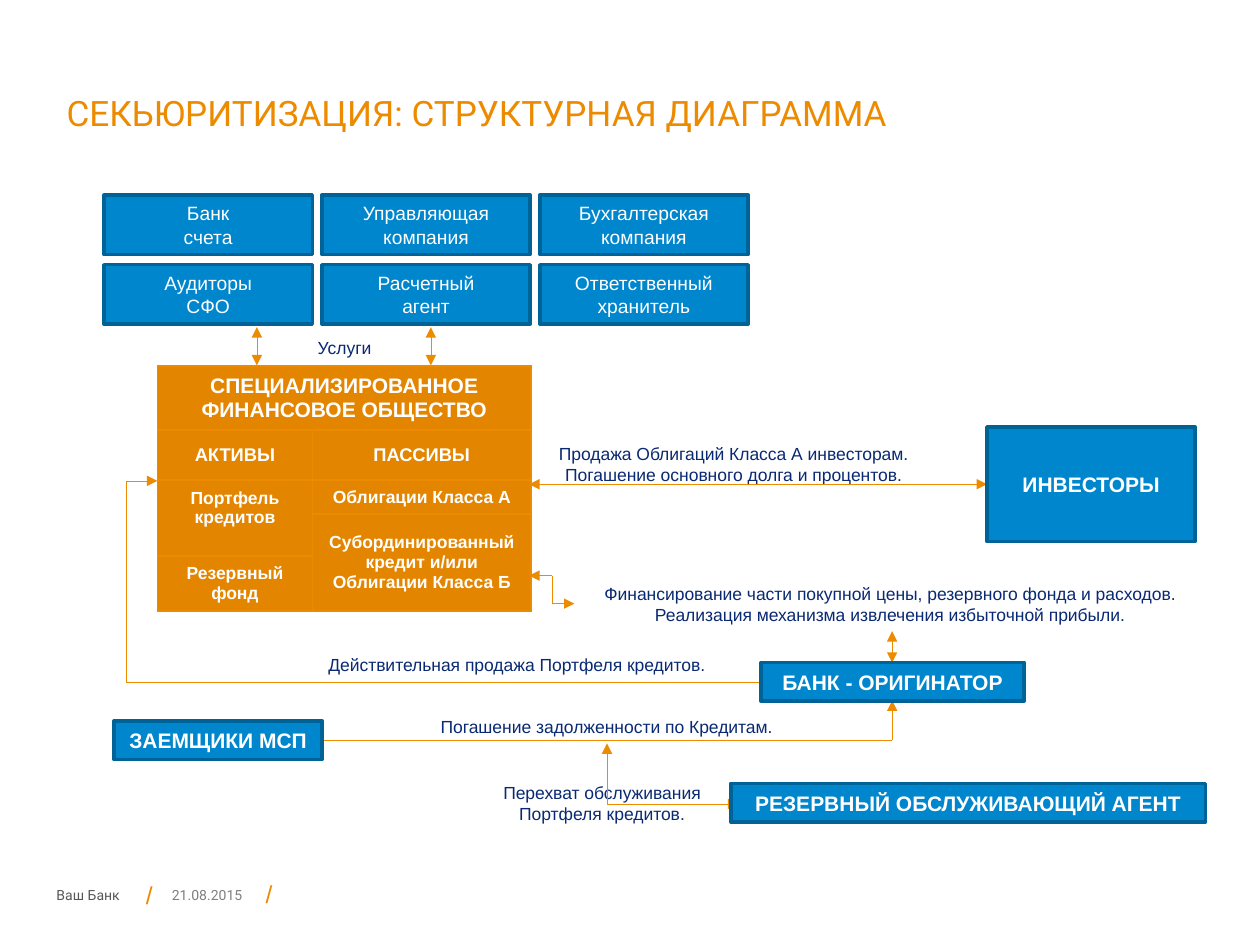
"""Build the securitisation structure diagram slide."""
from lxml.etree import SubElement
from pptx import Presentation
from pptx.dml.color import RGBColor
from pptx.enum.dml import MSO_LINE
from pptx.enum.shapes import MSO_CONNECTOR as Connector, MSO_SHAPE as Shape
from pptx.enum.text import MSO_ANCHOR as Anchor, PP_ALIGN as Align
from pptx.oxml.ns import qn
from pptx.util import Pt

ORANGE, BLUE, DARK_BLUE, NAVY, WHITE = "ED8B00", "0086CD", "006398", "0A2973", "FFFFFF"
TABLE_FILL = "E48500"

TITLE = ("СЕКЬЮРИТИЗАЦИЯ: СТРУКТУРНАЯ ДИАГРАММА", 31, 49, 658, 57)
FOOTERS = [
    ("Ваш Банк", 25.2, 502.6, 96.5, 17.3, 8, "Roboto", "575757", Align.LEFT),
    ("/", 76.3, 499, 16, 24.5, 14, "Arial", ORANGE, Align.LEFT),
    ("/", 144.7, 498.2, 16, 24.5, 14, "Arial", ORANGE, Align.LEFT),
    ("21.08.2015", 84.2, 502.6, 68.4, 17.3, 8, "Roboto", "7F7F7F", Align.CENTER),
]
SERVICES = [
    ["Банк\nсчета", "Управляющая\nкомпания", "Бухгалтерская\nкомпания"],
    ["Аудиторы\nСФО", "Расчетный\nагент", "Ответственный\nхранитель"],
]
SERVICE_LEFT, SERVICE_TOP, SERVICE_WIDTH, SERVICE_HEIGHT = 59.5, 111.5, 119, 34
SERVICE_STEP_X, SERVICE_STEP_Y = 124.5, 39.75
PARTIES = [
    ("ИНВЕСТОРЫ", 564, 244, 119, 65.5),
    ("ЗАЕМЩИКИ МСП", 65.2, 412, 119, 22),
    ("РЕЗЕРВНЫЙ ОБСЛУЖИВАЮЩИЙ АГЕНТ", 417.6, 447.8, 271.4, 22),
    ("БАНК - ОРИГИНАТОР", 434.8, 378.6, 150.5, 22),
]
LABELS = [
    ("Услуги", 126, 188.8, 141.8, 19.4),
    ("Погашение задолженности по Кредитам.", 196.8, 405.5, 299.5, 19.4),
    ("Действительная продажа Портфеля кредитов.", 155.5, 370.3, 279.4, 19.4),
    ("Финансирование части покупной цены, резервного фонда и расходов.\n"
     "Реализация механизма извлечения избыточной прибыли.", 326, 329.2, 365, 31.7),
    ("Перехват обслуживания\nПортфеля кредитов.", 193, 443, 302, 31.7),
    ("Продажа Облигаций Класса А инвесторам.\nПогашение основного долга и процентов.",
     309, 249.5, 220.3, 31.7),
]
ARROWS = [
    ("straightConnector1", (146.8, 187), (146.8, 208.8), True, None),
    ("straightConnector1", (246.2, 187), (246.2, 208.8), True, None),
    ("straightConnector1", (302.4, 276.7), (564, 276.7), True, None),
    ("straightConnector1", (509.8, 378.7), (509.8, 360.7), True, None),
    ("bentConnector3", (328.3, 345), (302.4, 329), True, 50000),
    ("bentConnector3", (434.8, 389.8), (90, 274.8), False, 105200),
    ("bentConnector2", (184.3, 422.8), (509.8, 400.3), False, None),
    ("bentConnector2", (421.9, 459.4), (346.9, 424.8), True, None),
]
TABLE_LEFT, TABLE_TOP = 90, 209.2
COLUMNS = [88.5, 125]
ROWS = [36.6, 28.6, 19.4, 24, 31.4]
MERGES = [((0, 0), (0, 1)), ((2, 0), (3, 0)), ((3, 1), (4, 1))]
CELLS = [
    (0, 0, "СПЕЦИАЛИЗИРОВАННОЕ\nФИНАНСОВОЕ ОБЩЕСТВО", 12, 3.6),
    (1, 0, "АКТИВЫ", 10.5, 3.6),
    (1, 1, "ПАССИВЫ", 10.5, 3.6),
    (2, 0, "Портфель кредитов", 10, 15),
    (2, 1, "Облигации Класса А", 10, 3.6),
    (3, 1, "Субординированный кредит и/или Облигации Класса Б", 10, 3.6),
    (4, 0, "Резервный фонд", 10, 3.6),
]


def rgb(color):
    """Turn a hex string into a colour."""
    return RGBColor.from_string(color)


def write(frame, text, size, color, bold=False, font="Arial", align=Align.CENTER):
    """Write lines of text into one paragraph."""
    paragraph = frame.paragraphs[0]
    paragraph.alignment = align
    for number, line in enumerate(text.split("\n")):
        if number:
            paragraph.add_line_break()
        run = paragraph.add_run()
        run.text = line
        run.font.name, run.font.size, run.font.bold = font, Pt(size), bold
        run.font.color.rgb = rgb(color)


def add_label(slide, text, left, top, width, height, size=10, font="Arial",
              color=NAVY, align=Align.CENTER, anchor=Anchor.MIDDLE):
    """Add a text box."""
    box = slide.shapes.add_textbox(Pt(left), Pt(top), Pt(width), Pt(height))
    box.text_frame.word_wrap = True
    box.text_frame.vertical_anchor = anchor
    write(box.text_frame, text, size, color, font=font, align=align)


def add_box(slide, text, left, top, width, height, size=12, bold=True):
    """Add a blue rectangle with text."""
    shape = slide.shapes.add_shape(Shape.RECTANGLE, Pt(left), Pt(top), Pt(width), Pt(height))
    shape.shadow.inherit = False
    shape.fill.solid()
    shape.fill.fore_color.rgb = rgb(BLUE)
    shape.line.color.rgb = rgb(DARK_BLUE)
    shape.line.width = Pt(2)
    shape.text_frame.word_wrap = True
    shape.text_frame.vertical_anchor = Anchor.MIDDLE
    write(shape.text_frame, text, size, WHITE, bold)


def add_arrow(slide, preset, start, end, both_ends, bend):
    """Add a dotted connector with arrowheads."""
    points = [Pt(value) for value in start + end]
    connector = slide.shapes.add_connector(Connector.STRAIGHT, *points)
    connector.line.color.rgb = rgb(ORANGE)
    connector.line.width = Pt(0.25)
    connector.line.dash_style = MSO_LINE.ROUND_DOT
    properties = connector._element.spPr
    geometry = properties.find(qn("a:prstGeom"))
    geometry.set("prst", preset)
    if bend is not None:
        guides = geometry.find(qn("a:avLst"))
        SubElement(guides, qn("a:gd"), name="adj1", fmla=f"val {bend}")
    line = properties.find(qn("a:ln"))
    for tag in ["a:headEnd", "a:tailEnd"] if both_ends else ["a:tailEnd"]:
        SubElement(line, qn(tag), type="triangle")
    SubElement(properties, qn("a:effectLst"))


def style_cell(cell):
    """Give a cell its borders and fill."""
    properties = cell._tc.get_or_add_tcPr()
    for side in ("a:lnL", "a:lnR", "a:lnT", "a:lnB"):
        line = SubElement(properties, qn(side), w=str(Pt(1)))
        SubElement(SubElement(line, qn("a:solidFill")), qn("a:srgbClr"), val=ORANGE)
    cell.fill.solid()
    cell.fill.fore_color.rgb = rgb(TABLE_FILL)


def add_balance_table(slide):
    """Add the table of assets and liabilities."""
    table = slide.shapes.add_table(len(ROWS), len(COLUMNS), Pt(TABLE_LEFT), Pt(TABLE_TOP),
                                   Pt(sum(COLUMNS)), Pt(sum(ROWS))).table
    for column, width in zip(table.columns, COLUMNS):
        column.width = Pt(width)
    for row, height in zip(table.rows, ROWS):
        row.height = Pt(height)
    for cell in table.iter_cells():
        style_cell(cell)
        cell.text_frame.paragraphs[0].font.size = Pt(10)
    for first, last in MERGES:
        table.cell(*first).merge(table.cell(*last))
    for row, column, text, size, bottom in CELLS:
        cell = table.cell(row, column)
        cell.vertical_anchor = Anchor.MIDDLE
        cell.margin_left = cell.margin_right = Pt(6.5)
        cell.margin_top, cell.margin_bottom = Pt(3.6), Pt(bottom)
        write(cell.text_frame, text, size, WHITE, True)


def main():
    """Assemble and save the slide."""
    presentation = Presentation()
    presentation.slide_width, presentation.slide_height = Pt(720), Pt(540)
    slide = presentation.slides.add_slide(presentation.slide_layouts[6])
    for *place, size, font, color, align in FOOTERS:
        add_label(slide, *place, size, font, color, align)
    add_label(slide, *TITLE, 20, "Roboto", ORANGE, Align.LEFT, Anchor.TOP)
    for label in LABELS:
        add_label(slide, *label)
    for arrow in ARROWS:
        add_arrow(slide, *arrow)
    add_balance_table(slide)
    for party in PARTIES:
        add_box(slide, *party)
    for row, names in enumerate(SERVICES):
        for column, name in enumerate(names):
            add_box(slide, name, SERVICE_LEFT + column * SERVICE_STEP_X,
                    SERVICE_TOP + row * SERVICE_STEP_Y,
                    SERVICE_WIDTH, SERVICE_HEIGHT, 11, False)
    presentation.save("out.pptx")


if __name__ == "__main__":
    main()
